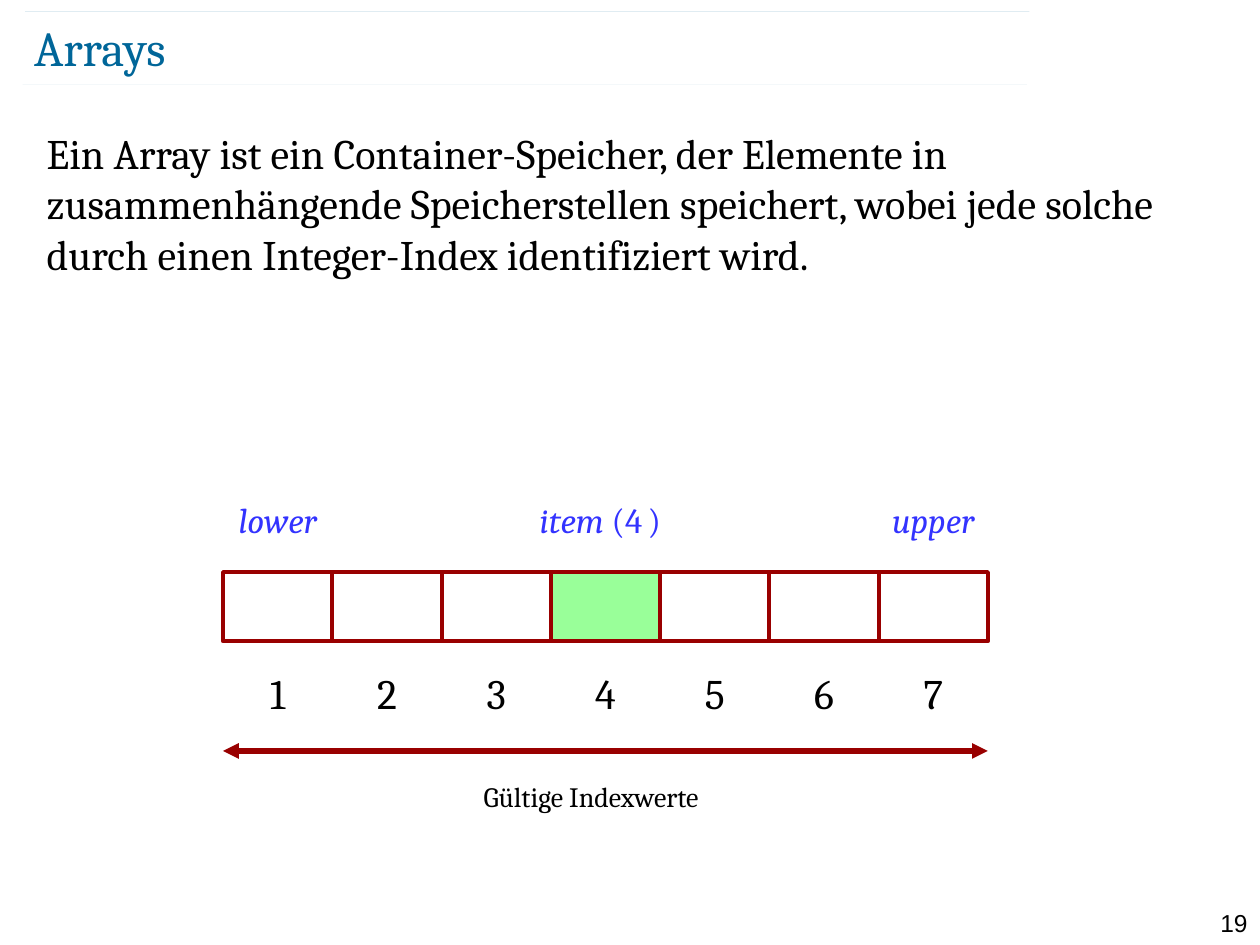
from lxml.etree import SubElement
from pptx import Presentation
from pptx.dml.color import RGBColor
from pptx.enum.shapes import MSO_CONNECTOR as Link, MSO_SHAPE as Form
from pptx.enum.text import MSO_ANCHOR as Anchor, MSO_AUTO_SIZE as Fit, PP_ALIGN as Align
from pptx.oxml.ns import qn
from pptx.util import Inches, Pt

BLACK = RGBColor(0x00, 0x00, 0x00)
TEAL = RGBColor(0x00, 0x66, 0x99)
BLUE = RGBColor(0x33, 0x33, 0xFF)
RED = RGBColor(0x99, 0x00, 0x00)
GREEN = RGBColor(0x99, 0xFF, 0x99)
SERIF = "Cambria"
CELLS = 7
SELECTED = 4
DEFINITION = (
    "Ein Array ist ein Container-Speicher, der Elemente in zusammenhängende "
    "Speicherstellen speichert, wobei jede solche durch einen Integer-Index "
    "identifiziert wird."
)


def place(shape, box):
    """Move a shape to a box of left, top, width and height in inches."""
    shape.left, shape.top, shape.width, shape.height = map(Inches, box)


def style(run, size, color=BLACK, font=SERIF, italic=False):
    """Format one run of text."""
    run.font.name = font
    run.font.size = Pt(size)
    run.font.italic = italic
    run.font.color.rgb = color


def add_label(slide, box, runs, align=Align.CENTER):
    """Add a one-paragraph text box from (text, format) pairs."""
    frame = slide.shapes.add_textbox(*map(Inches, box)).text_frame
    frame.word_wrap = True
    label = frame.paragraphs[0]
    label.alignment = align
    for text, look in runs:
        run = label.add_run()
        run.text = text
        style(run, **look)


def add_line(slide, start, end, color, width):
    """Draw a straight line without shadow and return its line format."""
    connector = slide.shapes.add_connector(Link.STRAIGHT, *map(Inches, start + end))
    connector.line.color.rgb = color
    connector.line.width = Pt(width)
    SubElement(connector._element.spPr, qn("a:effectLst"))
    return connector.line


def add_header(slide, box):
    """Place the title between two faint rules."""
    left, top, width, height = box
    for x, y in ((left, top + height), (left + 0.02, top)):
        rule = add_line(slide, (x, y), (x + width, y), TEAL, 0.1)
        tint = rule._get_or_add_ln().find(".//" + qn("a:srgbClr"))
        SubElement(tint, qn("a:alpha"), val="35000")
    title = slide.shapes.title
    place(title, (left + 0.09, top + 0.04, 8.69, 0.48))
    frame = title.text_frame
    frame.text = "Arrays"
    frame.auto_size = Fit.NONE
    frame.vertical_anchor = Anchor.MIDDLE
    frame.margin_left = frame.margin_right = frame.margin_top = frame.margin_bottom = 0
    frame.paragraphs[0].alignment = Align.LEFT
    style(frame.paragraphs[0].runs[0], 28, TEAL)


def add_definition(slide, box):
    """Fill the body placeholder with the unbulleted definition."""
    body = slide.placeholders[1]
    place(body, box)
    frame = body.text_frame
    frame.text = DEFINITION
    frame.auto_size = Fit.NONE
    sentence = frame.paragraphs[0]
    properties = sentence._p.get_or_add_pPr()
    properties.set("marL", "0")
    properties.set("indent", "0")
    SubElement(properties, qn("a:buNone"))
    sentence.space_before = Pt(0)
    style(sentence.runs[0], 24)


def add_cell(slide, box, selected):
    """Draw one array cell, filled when selected."""
    cell = slide.shapes.add_shape(Form.FLOWCHART_PROCESS, *map(Inches, box))
    cell.shadow.inherit = False
    cell.line.color.rgb = RED
    cell.line.width = Pt(2.25)
    if selected:
        cell.fill.solid()
        cell.fill.fore_color.rgb = GREEN
    else:
        cell.fill.background()


def add_array(slide, box):
    """Draw cells, indices, names and the index range in a box."""
    left, top, width, height = box
    column = width / CELLS
    cell_top = top + 0.63
    indices = range(1, CELLS + 1)
    for index in sorted(indices, key=lambda number: number == SELECTED):
        x = left + (index - 1) * column
        add_cell(slide, (x, cell_top, column, 0.55), index == SELECTED)
    for index in indices:
        x = left + (index - 1) * column
        add_label(slide, (x, top + 1.34, column, 0.5), [(str(index), dict(size=24))])

    upright = dict(size=20, color=BLUE)
    slanted = dict(upright, italic=True)
    item = [("item", slanted), (" (4", upright),
            (" ", dict(upright, size=14)), (")", upright)]
    names = (
        (1, 0, 1.02, [("lower", slanted)]),
        (SELECTED, -0.04, 1.42, item),
        (CELLS, 0, 1.02, [("upper", slanted)]),
    )
    for index, shift, span, runs in names:
        x = left + (index - 0.5) * column + shift - span / 2
        add_label(slide, (x, top, span, 0.43), runs)

    y = top + 2.05
    line = add_line(slide, (left, y), (left + width, y), RED, 3)._get_or_add_ln()
    for end in ("a:headEnd", "a:tailEnd"):
        SubElement(line, qn(end), type="triangle")
    add_label(slide, (left + 1.97, top + height - 0.37, 2.05, 0.37),
              [("Gültige Indexwerte", dict(size=16))], Align.LEFT)


def add_page_number(slide, box):
    """Write the page number in the lower right corner."""
    add_label(slide, box, [("19", dict(size=14, font="Arial"))], Align.RIGHT)


def main():
    """Build the slide and save it."""
    deck = Presentation()
    deck.slide_width, deck.slide_height = Inches(10), Inches(7.5)
    slide = deck.slides.add_slide(deck.slide_layouts[1])
    add_page_number(slide, (9.45, 7.16, 0.55, 0.24))
    add_header(slide, (0.18, 0.09, 7.97, 0.58))
    add_definition(slide, (0.27, 0.96, 9.4, 6.17))
    add_array(slide, (1.77, 3.91, 6.07, 2.6))
    deck.save("out.pptx")


if __name__ == "__main__":
    main()
